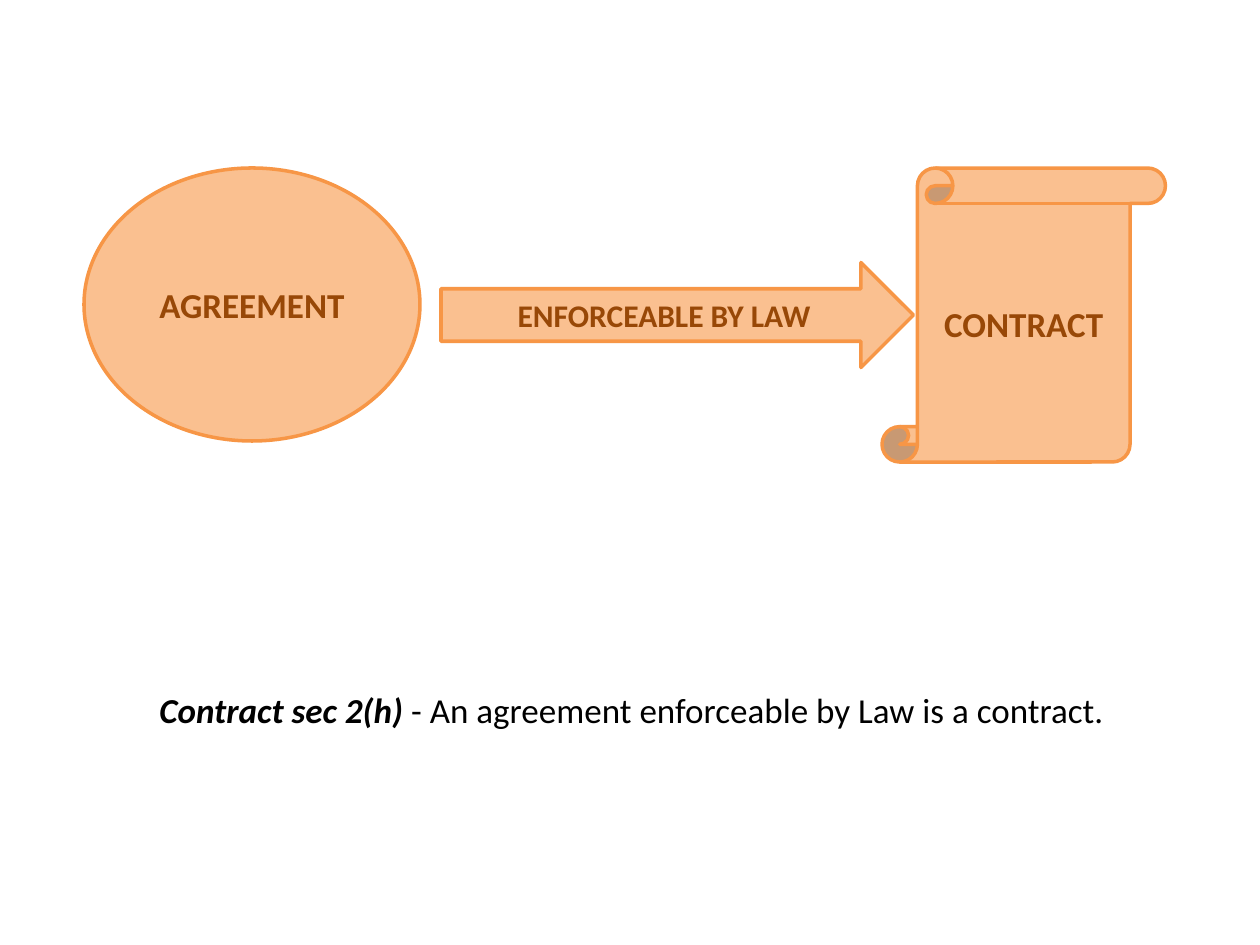
from dataclasses import dataclass

from pptx import Presentation
from pptx.dml.color import RGBColor as RGB
from pptx.enum.shapes import MSO_SHAPE as Kind
from pptx.enum.text import MSO_ANCHOR as Anchor, MSO_AUTO_SIZE as Fit, PP_ALIGN as Align
from pptx.util import Pt


@dataclass(frozen=True)
class Theme:
    face: str = "Calibri"
    fill: RGB = RGB(0xFA, 0xC0, 0x90)
    edge: RGB = RGB(0xF7, 0x96, 0x46)
    label: RGB = RGB(0x98, 0x48, 0x07)
    ink: RGB = RGB(0, 0, 0)
    large: int = 20
    small: int = 18
    line: int = 2


THEME = Theme()


def set_font(font, size, color):
    font.name = THEME.face
    font.size = Pt(size)
    font.color.rgb = color


def add_step(slide, kind, box, text, size):
    shape = slide.shapes.add_shape(kind, *map(Pt, box))
    shape.shadow.inherit = False
    shape.fill.solid()
    shape.fill.fore_color.rgb = THEME.fill
    shape.line.color.rgb = THEME.edge
    shape.line.width = Pt(THEME.line)
    frame = shape.text_frame
    frame.word_wrap = True
    frame.vertical_anchor = Anchor.MIDDLE
    para = frame.paragraphs[0]
    para.text = text
    para.alignment = Align.CENTER
    set_font(para.font, size, THEME.label)
    para.font.bold = True


def add_note(slide, box, term, text):
    frame = slide.shapes.add_textbox(*map(Pt, box)).text_frame
    frame.word_wrap = True
    frame.auto_size = Fit.SHAPE_TO_FIT_TEXT
    para = frame.paragraphs[0]
    para.line_spacing = 1.5
    set_font(para.font, THEME.large, THEME.ink)
    lead = para.add_run()
    lead.text = term
    lead.font.bold = lead.font.italic = True
    para.add_run().text = text


def main():
    deck = Presentation()
    deck.slide_width, deck.slide_height = Pt(720), Pt(540)
    slide = deck.slides.add_slide(deck.slide_layouts[6])
    add_note(slide, (84, 378, 564, 44), "Contract sec 2(h) ",
             "- An agreement enforceable by Law is a contract.")
    steps = [
        (Kind.OVAL, (48, 96, 192, 156), "AGREEMENT", THEME.large),
        (Kind.RIGHT_ARROW, (252, 150, 270, 60), "ENFORCEABLE BY LAW", THEME.small),
        (Kind.VERTICAL_SCROLL, (504, 96, 162, 168), "CONTRACT", THEME.large),
    ]
    for step in steps:
        add_step(slide, *step)
    deck.save("out.pptx")


if __name__ == "__main__":
    main()
